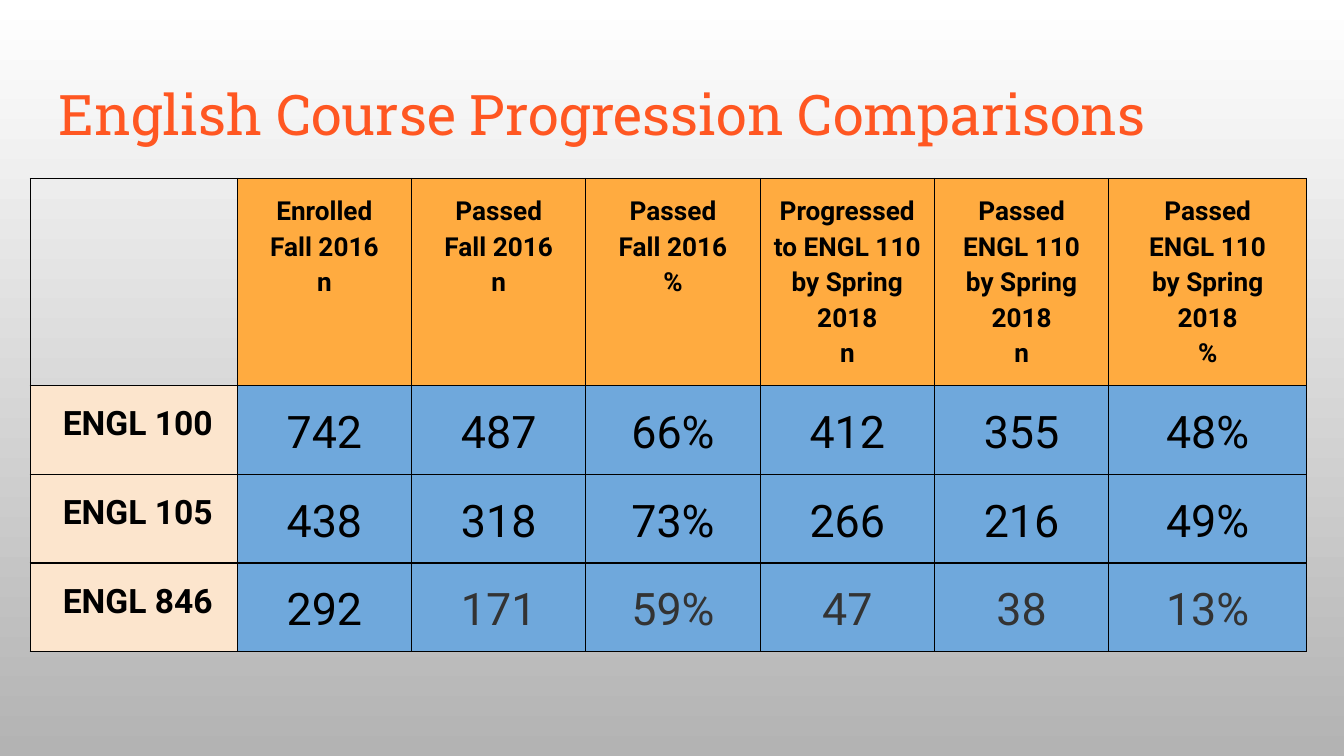
from lxml.etree import SubElement
from pptx import Presentation
from pptx.dml.color import RGBColor
from pptx.enum.text import MSO_ANCHOR, PP_ALIGN
from pptx.oxml.ns import qn
from pptx.util import Pt

WHITE = RGBColor(0xFF, 0xFF, 0xFF)
SILVER = RGBColor(0xB3, 0xB3, 0xB3)
RED = RGBColor(0xFF, 0x57, 0x22)
BLACK = RGBColor(0, 0, 0)
GREY = RGBColor(0x33, 0x33, 0x33)
ORANGE = RGBColor(0xFF, 0xAB, 0x40)
CREAM = RGBColor(0xFC, 0xE5, 0xCD)
BLUE = RGBColor(0x6F, 0xA8, 0xDC)

INSET = 7.2
WIDTHS = [110.9] + [93.4] * 5 + [106]
HEIGHTS = [109.5] + [46.8] * 3
HEADS = [
    [],
    ["Enrolled", "Fall 2016", "n"],
    ["Passed", "Fall 2016", "n"],
    ["Passed", "Fall 2016", "%"],
    ["Progressed", "to ENGL 110", "by Spring 2018", "n"],
    ["Passed", "ENGL 110", "by Spring 2018", "n"],
    ["Passed", "ENGL 110", "by Spring 2018", "%"],
]
ROWS = [
    ["ENGL 100", "742", "487", "66%", "412", "355", "48%"],
    ["ENGL 105", "438", "318", "73%", "266", "216", "49%"],
    ["ENGL 846", "292", "171", "59%", "47", "38", "13%"],
]


def add_run(para, text, face, size, color, bold=False):
    run = para.add_run()
    run.text = text
    font = run.font
    font.name, font.size, font.bold = face, Pt(size), bold
    font.color.rgb = color


def set_inset(area):
    area.margin_left = area.margin_right = Pt(INSET)
    area.margin_top = area.margin_bottom = Pt(INSET)


def add_edges(cell):
    props = cell._tc.get_or_add_tcPr()
    for side in ("a:lnL", "a:lnR", "a:lnT", "a:lnB"):
        line = SubElement(props, qn(side), w=str(Pt(0.75)))
        fill = SubElement(line, qn("a:solidFill"))
        SubElement(fill, qn("a:srgbClr"), val=str(BLACK))


def fill_cell(cell, lines, size, color, bold, back, hang=False):
    set_inset(cell)
    add_edges(cell)
    if back is None:
        cell.fill.background()
    else:
        cell.fill.solid()
        cell.fill.fore_color.rgb = back
    frame = cell.text_frame
    for num, text in enumerate(lines):
        para = frame.add_paragraph() if num else frame.paragraphs[0]
        para.alignment = PP_ALIGN.CENTER
        para.line_spacing = 1.15
        if hang:
            props = para._p.get_or_add_pPr()
            props.set("marL", str(Pt(36)))
            props.set("indent", str(Pt(-31.7)))
        add_run(para, text, "Roboto", size, color, bold)


def add_title(slide, left, top, width, height):
    frame = slide.shapes.add_textbox(Pt(left), Pt(top), Pt(width), Pt(height)).text_frame
    frame.word_wrap = True
    frame.vertical_anchor = MSO_ANCHOR.TOP
    set_inset(frame)
    add_run(frame.paragraphs[0], "English Course Progression Comparisons", "Roboto Slab", 30, RED)


def add_grid(slide, left, top, width, height):
    table = slide.shapes.add_table(
        len(HEIGHTS), len(WIDTHS), Pt(left), Pt(top), Pt(width), Pt(height)
    ).table
    table.first_row = table.horz_banding = False
    for col, size in zip(table.columns, WIDTHS):
        col.width = Pt(size * width / sum(WIDTHS))
    for row, size in zip(table.rows, HEIGHTS):
        row.height = Pt(size * height / sum(HEIGHTS))
    for col, lines in enumerate(HEADS):
        fill_cell(table.cell(0, col), lines, 14, BLACK, True, ORANGE if lines else None)
    for row, texts in enumerate(ROWS, 1):
        fill_cell(table.cell(row, 0), texts[:1], 18, BLACK, True, CREAM, hang=True)
        for col, text in enumerate(texts[1:], 1):
            color = GREY if row == len(ROWS) and col > 1 else BLACK
            fill_cell(table.cell(row, col), [text], 24, color, False, BLUE)


def paint_back(slide):
    fill = slide.background.fill
    fill.gradient()
    fill.gradient_angle = 270
    for stop, color, place in zip(fill.gradient_stops, (WHITE, SILVER), (0, 1)):
        stop.color.rgb = color
        stop.position = place


def main():
    deck = Presentation()
    deck.slide_width, deck.slide_height = Pt(720), Pt(405)
    slide = deck.slides.add_slide(deck.slide_layouts[6])
    paint_back(slide)
    add_title(slide, 24.5, 35.3, 671, 45.4)
    add_grid(slide, 16.2, 95.6, sum(WIDTHS), sum(HEIGHTS))
    deck.save("out.pptx")


if __name__ == "__main__":
    main()
